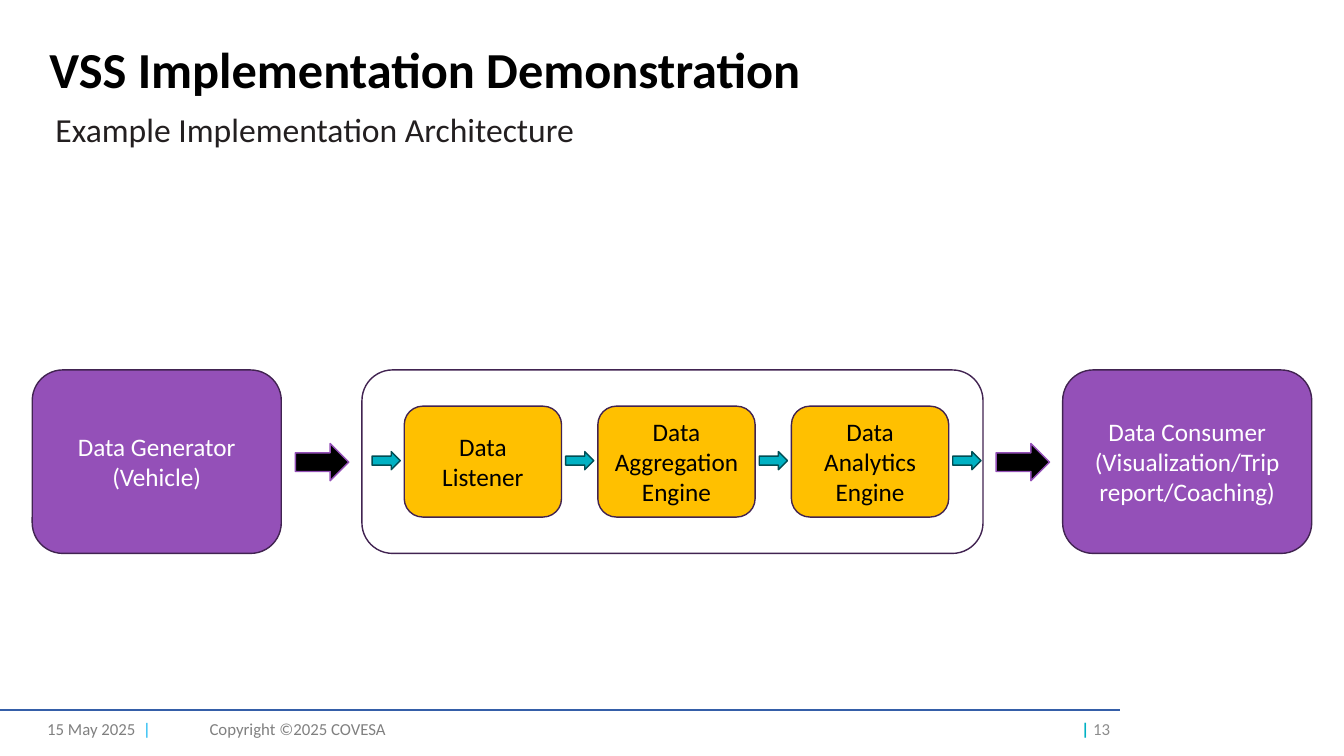
from pptx import Presentation, util as u
from pptx.dml.color import RGBColor
from pptx.enum import shapes, text
from pptx.oxml import ns, xmlchemy

BLACK = RGBColor(0x00, 0x00, 0x00)
WHITE = RGBColor(0xFF, 0xFF, 0xFF)
INK = RGBColor(0x23, 0x1F, 0x20)
GREY = RGBColor(0x80, 0x80, 0x80)
PAGE_GREY = RGBColor(0x8C, 0x8C, 0x8C)
BLUE = RGBColor(0x35, 0x5E, 0xA8)
SKY = RGBColor(0x00, 0xB0, 0xF0)
TEAL = RGBColor(0x00, 0xB1, 0xC3)
DARK_TEAL = RGBColor(0x00, 0x4E, 0x55)
PURPLE = RGBColor(0x94, 0x50, 0xB8)
DARK_PURPLE = RGBColor(0x41, 0x23, 0x51)
AMBER = RGBColor(0xFF, 0xC0, 0x00)

FONT = "Calibri"
ROUND = shapes.MSO_SHAPE.ROUNDED_RECTANGLE
ARROW = shapes.MSO_SHAPE.RIGHT_ARROW


def inches(*lengths):
    return [u.Inches(length) for length in lengths]


def add_span(para, words, size, color, bold=False):
    span = para.add_run()
    span.text = words
    span.font.name = FONT
    span.font.size = u.Pt(size)
    span.font.bold = bold
    span.font.color.rgb = color


def add_label(page, box, spans, size, align=text.PP_ALIGN.LEFT,
              anchor=text.MSO_ANCHOR.MIDDLE, inset=None):
    """One line of text; spans are (words, colour, bold)."""
    frame = page.shapes.add_textbox(*inches(*box)).text_frame
    frame.word_wrap = True
    frame.vertical_anchor = anchor
    if inset is not None:
        frame.margin_left = frame.margin_right = u.Inches(inset)
        frame.margin_top = frame.margin_bottom = u.Inches(inset)
    para = frame.paragraphs[0]
    para.alignment = align
    for words, color, bold in spans:
        add_span(para, words, size, color, bold)


def add_block(page, kind, box, fill, line, lines=(), color=BLACK):
    """A filled or hollow shape with centred 18 pt paragraphs."""
    block = page.shapes.add_shape(kind, *inches(*box))
    block.shadow.inherit = False
    if fill is None:
        block.fill.background()
    else:
        block.fill.solid()
        block.fill.fore_color.rgb = fill
    block.line.color.rgb = line
    block.line.width = u.Pt(1)
    frame = block.text_frame
    frame.word_wrap = True
    frame.vertical_anchor = text.MSO_ANCHOR.MIDDLE
    for index, words in enumerate(lines):
        para = frame.add_paragraph() if index else frame.paragraphs[0]
        para.alignment = text.PP_ALIGN.CENTER
        add_span(para, words, 18, color)


def add_heading(page, left, top, width):
    title = page.shapes.title
    title.left, title.top, title.width, title.height = inches(left, top, width, 0.68)
    frame = title.text_frame
    frame.word_wrap = True
    frame.auto_size = text.MSO_AUTO_SIZE.NONE
    frame.vertical_anchor = text.MSO_ANCHOR.TOP
    para = frame.paragraphs[0]
    para.alignment = text.PP_ALIGN.LEFT
    para.line_spacing = 0.9
    add_span(para, "VSS Implementation Demonstration", 36, BLACK, True)
    add_label(page, (left + 0.03, top + 0.55, 10.22, 0.67),
              [("Example Implementation Architecture", INK, False)], 24,
              anchor=text.MSO_ANCHOR.TOP, inset=0.13)


def add_pipeline(page, left, top, width, height):
    """The hollow frame: three engines with an arrow before and after each."""
    add_block(page, ROUND, (left, top, width, height), None, DARK_PURPLE)
    engines = [("Data", "Listener"), ("Data Aggregation Engine",),
               ("Data Analytics Engine",)]
    step, first = 1.92, left + 0.42
    for column, lines in enumerate(engines):
        add_block(page, ROUND, (first + column * step, top + 0.36, 1.56, 1.1),
                  AMBER, DARK_PURPLE, lines)
    for column in range(len(engines) + 1):
        add_block(page, ARROW, (first - 0.32 + column * step, top + 0.81, 0.28, 0.18),
                  TEAL, DARK_TEAL)


def add_architecture(page, left, top, height):
    """Generator, pipeline and consumer in one row."""
    ends = [(left, ("Data Generator (Vehicle)",)),
            (left + 10.22, ("Data Consumer", "(Visualization/Trip report/Coaching)"))]
    for x, lines in ends:
        add_block(page, ROUND, (x, top, 2.47, height), PURPLE, DARK_PURPLE, lines, WHITE)
    for x in (left + 2.61, left + 9.56):
        add_block(page, ARROW, (x, top + 0.73, 0.53, 0.37), BLACK, PURPLE)
    add_pipeline(page, left + 3.27, top, 6.16, height)


def add_footer(page, top, width):
    rule = page.shapes.add_connector(shapes.MSO_CONNECTOR.STRAIGHT,
                                     *inches(0, top, width, top))
    rule.line.color.rgb = BLUE
    rule.line.width = u.Pt(1.5)
    rule._element.spPr.append(xmlchemy.OxmlElement("a:effectLst"))
    row = top - 0.01
    add_label(page, (0.37, row, 1.76, 0.4),
              [("15 May 2025  ", GREY, False), ("|", SKY, False)], 12)
    add_label(page, (1.98, row, 2.13, 0.4),
              [("Copyright ©2025 COVESA", GREY, False)], 12)
    add_label(page, (width - 3, row, 3, 0.4),
              [("| ", TEAL, True), ("13", PAGE_GREY, False)], 12,
              align=text.PP_ALIGN.RIGHT)


def main():
    deck = Presentation()
    deck.slide_width, deck.slide_height = inches(13.33, 7.5)
    page = deck.slides.add_slide(deck.slide_layouts[5])
    add_footer(page, 7.04, 11.11)
    add_heading(page, 0.39, 0.4, 11.5)
    add_architecture(page, 0.32, 3.67, 1.82)
    deck.save("out.pptx")


if __name__ == "__main__":
    main()
